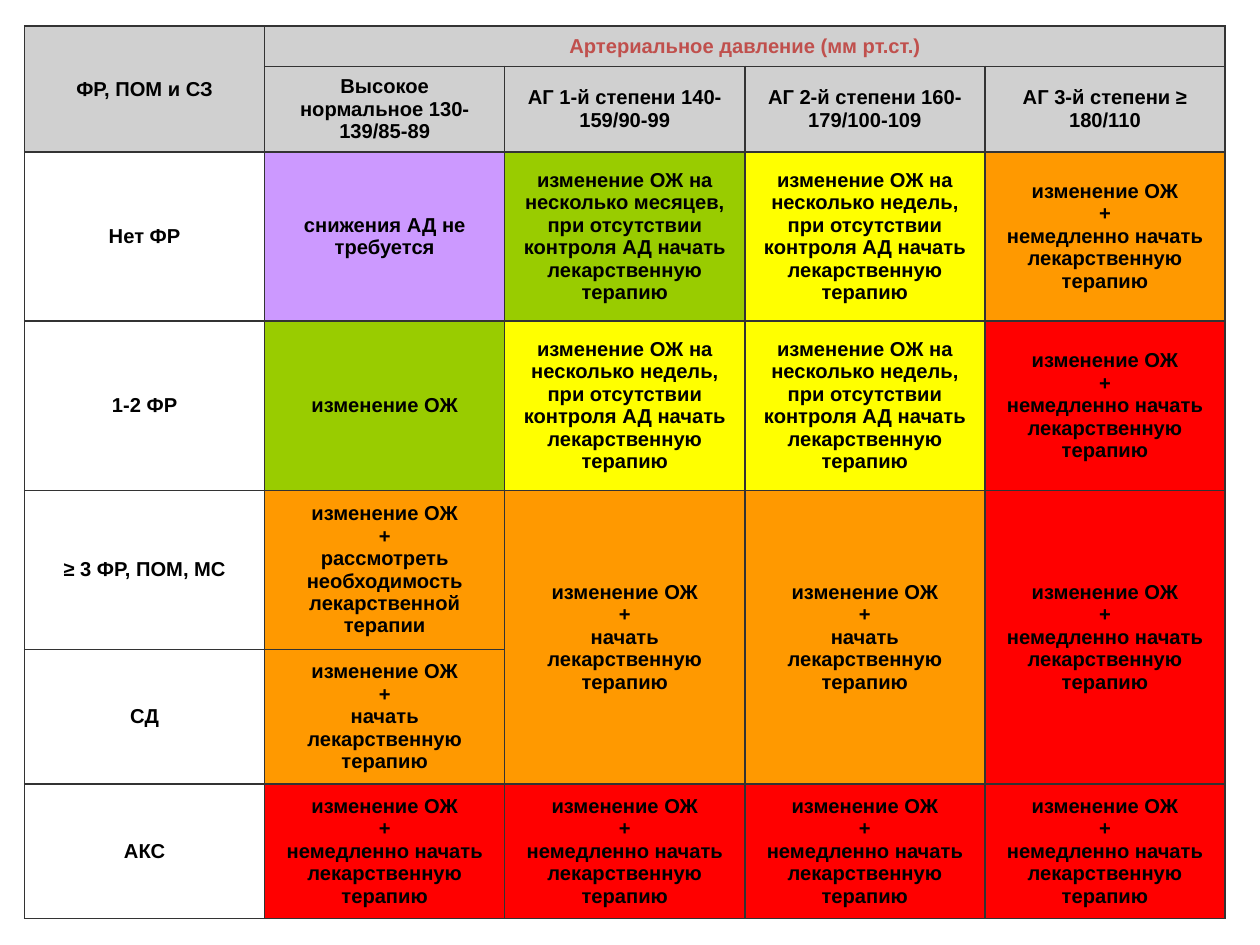
from copy import deepcopy
from lxml import etree
from pptx import Presentation
from pptx import util as u
from pptx.dml.color import RGBColor
from pptx.enum import text
from pptx.oxml import ns


def paint(fmt, hue):
    fmt.solid()
    fmt.fore_color.rgb = RGBColor.from_string(hue)


def edge(cell, hue, width):
    props = cell._tc.get_or_add_tcPr()
    for side in ("lnL", "lnR", "lnT", "lnB"):
        line = etree.SubElement(props, ns.qn("a:" + side), w=str(u.Pt(width)))
        fill = etree.SubElement(line, ns.qn("a:solidFill"))
        etree.SubElement(fill, ns.qn("a:srgbClr"), val=hue)


GREY, WHITE, BLACK, ROSE = "D0D0D0", "FFFFFF", "000000", "C0504D"
LILAC, GREEN, YELLOW = "CC99FF", "99CC00", "FFFF00"
ORANGE, RED = "FF9900", "FF0000"

life = "изменение ОЖ"
delay = life + " на несколько {}, при отсутствии контроля АД начать лекарственную терапию"
months, weeks = delay.format("месяцев"), delay.format("недель")
start = life + "\v+\vначать лекарственную терапию"
urgent = life + "\v+\vнемедленно начать лекарственную терапию"
weigh = life + "\v+\vрассмотреть необходимость лекарственной терапии"

rows = [
    (22.9, [("ФР, ПОМ и СЗ", GREY), ("Артериальное давление (мм рт.ст.)", GREY)]),
    (48.9, [("", GREY), ("Высокое нормальное 130-139/85-89", GREY),
            ("АГ 1-й степени 140-159/90-99", GREY),
            ("АГ 2-й степени 160-179/100-109", GREY),
            ("АГ 3-й степени ≥ 180/110", GREY)]),
    (96.7, [("Нет ФР", WHITE), ("снижения АД не требуется", LILAC),
            (months, GREEN), (weeks, YELLOW), (urgent, ORANGE)]),
    (96.7, [("1-2 ФР", WHITE), (life, GREEN),
            (weeks, YELLOW), (weeks, YELLOW), (urgent, RED)]),
    (90.9, [("≥ 3 ФР, ПОМ, МС", WHITE), (weigh, ORANGE),
            (start, ORANGE), (start, ORANGE), (urgent, RED)]),
    (76.9, [("СД", WHITE), (start, ORANGE)]),
    (76.9, [("АКС", WHITE)] + [(urgent, RED)] * 4),
]
spans = [(0, 0, 1, 0), (0, 1, 0, 4)] + [(4, col, 5, col) for col in (2, 3, 4)]
style = {"name": "Arial", "size": u.Pt(11.5), "bold": True}

deck = Presentation()
deck.slide_width, deck.slide_height = u.Pt(720), u.Pt(540)
slide = deck.slides.add_slide(deck.slide_layouts[6])
high = sum(tall for tall, _ in rows)
table = slide.shapes.add_table(
    len(rows), 5, u.Pt(14), u.Pt(15), u.Pt(686), u.Pt(high)).table
for flag in ("first_row", "horz_banding"):
    setattr(table, flag, False)
for col in table.columns:
    col.width = u.Pt(137.2)

for top, bottom in [((a, b), (c, d)) for a, b, c, d in spans]:
    table.cell(*top).merge(table.cell(*bottom))

for r, (tall, cells) in enumerate(rows):
    table.rows[r].height = u.Pt(tall)
    for c in range(5):
        cell = table.cell(r, c)
        edge(cell, "333333", 1)
        words, hue = cells[c] if c < len(cells) else ("", cells[-1][1])
        paint(cell.fill, hue)
        cell.vertical_anchor = text.MSO_ANCHOR.MIDDLE
        if not words:
            continue
        para = cell.text_frame.paragraphs[0]
        para.text = words
        para.alignment = text.PP_ALIGN.CENTER
        for run in para.runs:
            for key, value in style.items():
                setattr(run.font, key, value)
            paint(run.font.fill, ROSE if (r, c) == (0, 1) else BLACK)
        for gap in para._p.findall(ns.qn("a:br")):
            gap.insert(0, deepcopy(para.runs[0]._r.rPr))

deck.save("out.pptx")
